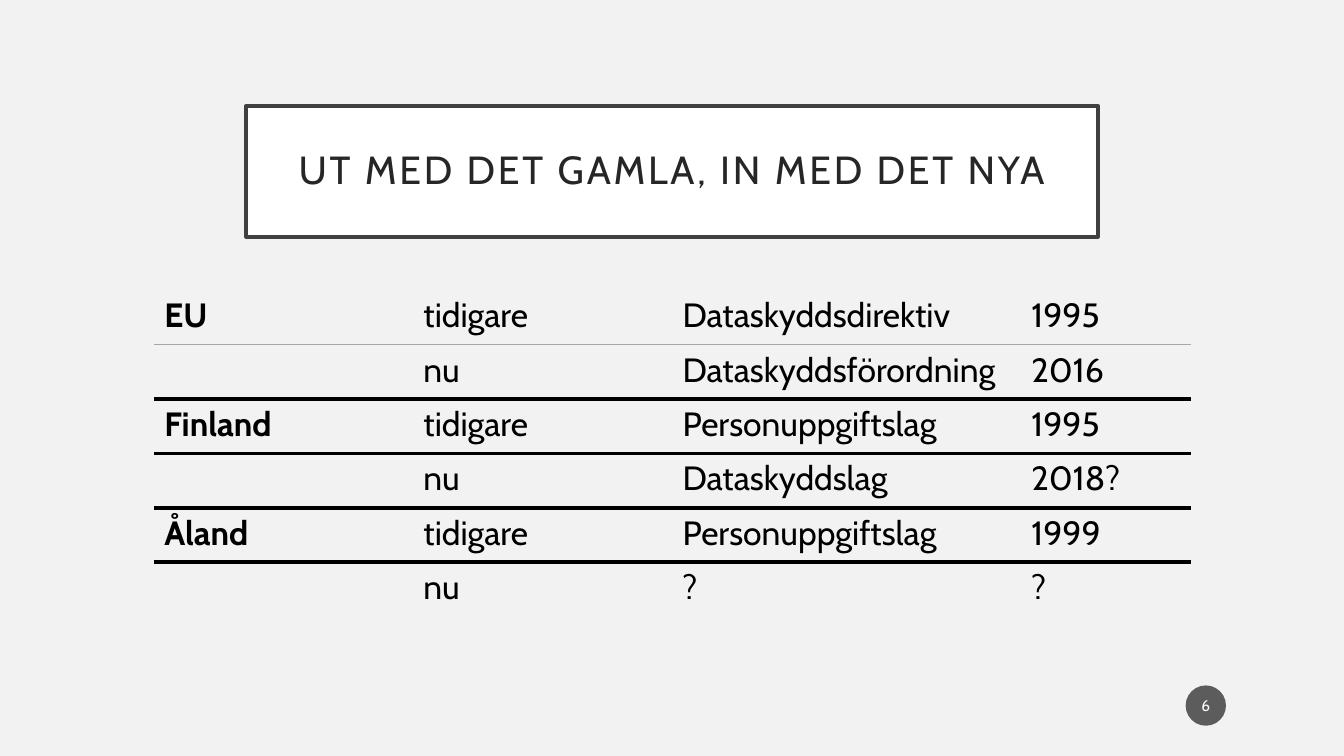
from lxml import etree
from pptx import Presentation
from pptx import util as u
from pptx.dml.color import RGBColor
from pptx.enum import shapes, text
from pptx.oxml import ns

ROWS = [
    ("EU", "tidigare", "Dataskyddsdirektiv", "1995"),
    ("", "nu", "Dataskyddsförordning", "2016"),
    ("Finland", "tidigare", "Personuppgiftslag", "1995"),
    ("", "nu", "Dataskyddslag", "2018?"),
    ("Åland", "tidigare", "Personuppgiftslag", "1999"),
    ("", "nu", "?", "?"),
]
COLUMN_WIDTHS = (2.57, 2.57, 3.46, 1.68)
ROW_HEIGHT = 0.54
THIN_RULE = ("A6A6A6", 0.5)
THICK_RULE = ("000000", 3)
NO_STYLE = "{2D5ABB26-0587-4C30-8999-92F81FD0307C}"


def colour(value):
    return RGBColor.from_string(value)


class SlideBuilder:
    font = "Cabin"

    def __init__(self, deck, background):
        self.page = deck.slides.add_slide(deck.slide_layouts[5])
        fill = self.page.background.fill
        fill.solid()
        fill.fore_color.rgb = colour(background)

    def set_words(self, frame, words, size, ink, bold=False,
                  align=text.PP_ALIGN.LEFT):
        frame.text = words
        para = frame.paragraphs[0]
        para.alignment = align
        para.font.size = u.Pt(size)
        for span in para.runs:
            span.font.name = self.font
            span.font.size = u.Pt(size)
            span.font.bold = bold
            span.font.color.rgb = colour(ink)
        return para

    def centre(self, frame, side, top):
        frame.word_wrap = True
        frame.auto_size = text.MSO_AUTO_SIZE.NONE
        frame.vertical_anchor = text.MSO_ANCHOR.MIDDLE
        frame.margin_left = frame.margin_right = u.Inches(side)
        frame.margin_top = frame.margin_bottom = u.Inches(top)

    def title(self, words, left, top, width, height):
        box = self.page.shapes.title
        box.left, box.top = u.Inches(left), u.Inches(top)
        box.width, box.height = u.Inches(width), u.Inches(height)
        box.fill.solid()
        box.fill.fore_color.rgb = colour("FFFFFF")
        box.line.color.rgb = colour("404040")
        box.line.width = u.Pt(2.5)
        self.centre(box.text_frame, 0.2, 0.2)
        para = self.set_words(box.text_frame, words, 28, "262626",
                              align=text.PP_ALIGN.CENTER)
        para.line_spacing = 0.9
        para.runs[0]._r.get_or_add_rPr().set("spc", "200")

    def number_badge(self, number, left, top, size):
        badge = self.page.shapes.add_shape(
            shapes.MSO_SHAPE.OVAL, u.Inches(left), u.Inches(top),
            u.Inches(size), u.Inches(size))
        badge.shadow.inherit = False
        badge.fill.solid()
        badge.fill.fore_color.rgb = colour("1D1D1D")
        shade = badge._element.spPr.find(".//" + ns.qn("a:srgbClr"))
        etree.SubElement(shade, ns.qn("a:alpha"), val="70000")
        badge.line.fill.background()
        self.centre(badge.text_frame, 0.02, 0.05)
        self.set_words(badge.text_frame, number, 11, "FFFFFF",
                       align=text.PP_ALIGN.CENTER)

    def rule(self, cell, tag, style):
        ink, width = style
        line = etree.Element(ns.qn(tag), w=str(u.Pt(width)))
        fill = etree.SubElement(line, ns.qn("a:solidFill"))
        etree.SubElement(fill, ns.qn("a:srgbClr"), val=ink)
        cell._tc.get_or_add_tcPr().insert(0, line)

    def table(self, rows, left, top):
        frame = self.page.shapes.add_table(
            len(rows), len(COLUMN_WIDTHS), u.Inches(left), u.Inches(top),
            u.Inches(sum(COLUMN_WIDTHS)), u.Inches(ROW_HEIGHT * len(rows)))
        grid = frame.table
        grid.first_row = grid.horz_banding = False
        grid._tbl.tblPr.find(ns.qn("a:tableStyleId")).text = NO_STYLE
        for column, width in zip(grid.columns, COLUMN_WIDTHS):
            column.width = u.Inches(width)
        for r, values in enumerate(rows):
            grid.rows[r].height = u.Inches(ROW_HEIGHT)
            for c, value in enumerate(values):
                cell = grid.cell(r, c)
                cell.fill.background()
                self.set_words(cell.text_frame, value, 24, "000000", bold=c == 0)
                # Neighbouring rows share the rule between them
                if r < len(rows) - 1:
                    self.rule(cell, "a:lnB", THICK_RULE if r else THIN_RULE)
                if r > 0:
                    self.rule(cell, "a:lnT", THICK_RULE if r > 1 else THIN_RULE)


def main():
    deck = Presentation()
    deck.slide_width, deck.slide_height = u.Inches(13.33), u.Inches(7.5)
    slide = SlideBuilder(deck, "F2F2F2")

    # Framed title
    slide.title("UT MED DET GAMLA, IN MED DET NYA", 2.44, 1.05, 8.45, 1.3)

    # Slide number
    slide.number_badge("6", 11.76, 6.8, 0.4)

    # Old and new laws
    slide.table(ROWS, 1.53, 2.88)

    deck.save("out.pptx")


if __name__ == "__main__":
    main()
